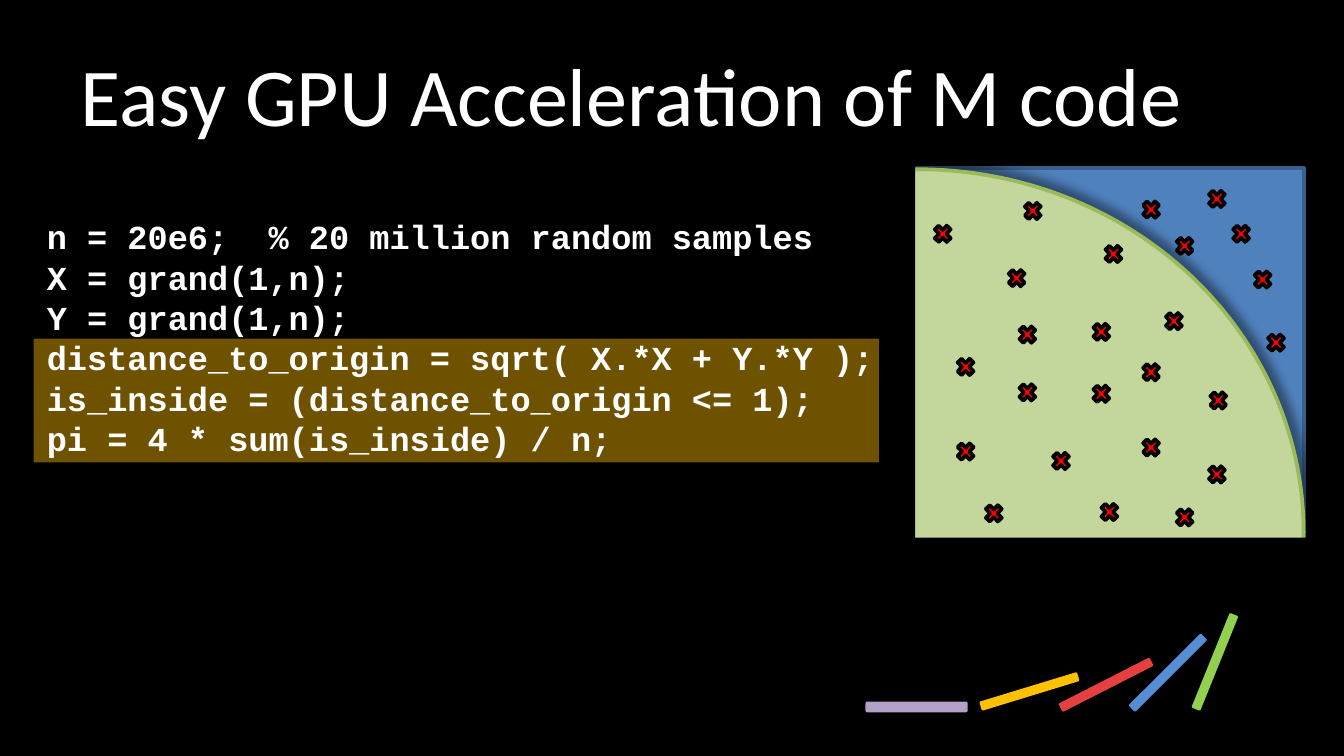
"""Build the slide on easy GPU acceleration of M code."""

from typing import NamedTuple, Optional

from lxml.etree import SubElement
from pptx import Presentation
from pptx.dml.color import RGBColor as Rgb
from pptx.enum.shapes import MSO_SHAPE as Preset
from pptx.enum.text import MSO_ANCHOR as Anchor, MSO_AUTO_SIZE as AutoSize, PP_ALIGN as Align
from pptx.oxml.ns import qn
from pptx.util import Inches, Pt

COLORS = {
    "black": "000000", "white": "FFFFFF", "square": "4F81BD", "square_edge": "3A5F8C",
    "circle": "C3D69B", "circle_edge": "9BBB59", "sample": "FF0000", "highlight": "FFC000",
    "green": "92D050", "red": "E44040", "yellow": "FFC000", "blue": "558ED5", "purple": "B3A2C7",
}


class Area(NamedTuple):
    left: float
    top: float
    width: float
    height: float


class Panel(NamedTuple):
    preset: Preset
    area: Area
    fill: str
    edge: Optional[str] = None
    rotation: float = 0


SQUARE = Panel(Preset.RECTANGLE, Area(6.81, 1.25, 2.89, 2.76), "square", "square_edge")
CIRCLE = Panel(Preset.OVAL, Area(3.96, 1.26, 5.74, 5.4), "circle", "circle_edge")
MASKS = [
    Panel(Preset.RECTANGLE, Area(3.8, 1.06, 3.01, 4.41), "black"),
    Panel(Preset.RECTANGLE, Area(4.24, 4, 5.56, 2.9), "black"),
]
HIGHLIGHT = Panel(Preset.RECTANGLE, Area(0.25, 2.52, 6.29, 0.92), "highlight")
SAMPLES = [
    (7.56, 2.4), (7.56, 2.83), (9.15, 1.65), (8.48, 1.47), (8.65, 2.3),
    (8.11, 2.38), (6.93, 1.65), (7.48, 1.98), (8.48, 3.24), (7.81, 3.34),
    (8.97, 3.44), (8.98, 2.89), (9.41, 2.46), (8.73, 1.74), (8.2, 1.8),
    (7.1, 3.27), (7.1, 2.64), (7.31, 3.73), (8.17, 3.72), (8.11, 2.84),
    (8.48, 2.68), (7.6, 1.48), (8.73, 3.76), (9.31, 1.99), (8.97, 1.39),
]
BARS = [
    Panel(Preset.ROUNDED_RECTANGLE, Area(left, top, 0.76, height), color, None, rotation)
    for left, top, height, color, rotation in [
        (8.66, 4.89, 0.07, "green", 292),
        (7.85, 5.06, 0.07, "red", 333),
        (7.28, 5.11, 0.07, "yellow", 343),
        (8.31, 4.97, 0.07, "blue", 315),
        (6.44, 5.22, 0.08, "purple", 0),
    ]
]
CODE = [
    "n = 20e6;  % 20 million random samples",
    "X = grand(1,n);",
    "Y = grand(1,n);",
    "distance_to_origin = sqrt( X.*X + Y.*Y );",
    "is_inside = (distance_to_origin <= 1);",
    "pi = 4 * sum(is_inside) / n;",
]


def color_of(name: str) -> Rgb:
    """Return the named colour."""
    return Rgb.from_string(COLORS[name])


def lengths(area: Area) -> list:
    """Return the sides of an area as lengths."""
    return [Inches(value) for value in area]


def draw_panel(slide, panel: Panel):
    """Draw a filled preset shape with an optional edge."""
    shape = slide.shapes.add_shape(panel.preset, *lengths(panel.area))
    shape.shadow.inherit = False
    shape.rotation = panel.rotation
    shape.fill.solid()
    shape.fill.fore_color.rgb = color_of(panel.fill)
    if panel.edge:
        shape.line.color.rgb = color_of(panel.edge)
        shape.line.width = Pt(2)
    else:
        shape.line.fill.background()
    return shape


def set_alpha(color_element, percent: int) -> None:
    """Set the opacity of a colour element."""
    SubElement(color_element, qn("a:alpha"), val=str(percent * 1000))


def add_glow_shadow(shape, blur: int, percent: int, scale: int) -> None:
    """Give a shape a soft, slightly enlarged black shadow without offset."""
    effects = shape.element.spPr.find(qn("a:effectLst"))
    shadow = SubElement(
        effects, qn("a:outerShdw"), blurRad=str(Pt(blur)),
        sx=str(scale * 1000), sy=str(scale * 1000), algn="ctr", rotWithShape="0",
    )
    set_alpha(SubElement(shadow, qn("a:srgbClr"), val=COLORS["black"]), percent)


def add_line(para, text: str, font_name: str, size: float, bold: bool) -> None:
    """Add a left-aligned white run to a paragraph."""
    para.alignment = Align.LEFT
    span = para.add_run()
    span.text = text
    span.font.name = font_name
    span.font.size = Pt(size)
    span.font.bold = bold
    span.font.color.rgb = color_of("white")


def draw_title(slide) -> None:
    """Place and fill the title placeholder."""
    title = slide.shapes.title
    title.left, title.top, title.width, title.height = lengths(Area(0.5, 0.23, 9, 0.94))
    title.text_frame.vertical_anchor = Anchor.MIDDLE
    add_line(title.text_frame.paragraphs[0], "Easy GPU Acceleration of M code", "Calibri", 44, False)


def draw_code(slide) -> None:
    """Draw the code listing."""
    box = slide.shapes.add_textbox(*lengths(Area(0.25, 1.56, 9.42, 1.92)))
    frame = box.text_frame
    frame.word_wrap = True
    frame.auto_size = AutoSize.SHAPE_TO_FIT_TEXT
    for index, line in enumerate(CODE):
        para = frame.add_paragraph() if index else frame.paragraphs[0]
        para.line_spacing = Pt(21.6)
        add_line(para, line, "Courier New", 18, True)


def main() -> None:
    """Build and save the deck."""
    deck = Presentation()
    deck.slide_width = Inches(10)
    deck.slide_height = deck.slide_width * 9 // 16
    page = deck.slides.add_slide(deck.slide_layouts[5])
    page.background.fill.solid()
    page.background.fill.fore_color.rgb = color_of("black")

    draw_panel(page, SQUARE)
    add_glow_shadow(draw_panel(page, CIRCLE), blur=5, percent=40, scale=102)
    for mask in MASKS:
        draw_panel(page, mask)
    for left, top in SAMPLES:
        draw_panel(page, Panel(Preset.MATH_MULTIPLY, Area(left, top, 0.17, 0.18), "sample", "black"))
    highlight = draw_panel(page, HIGHLIGHT)
    set_alpha(highlight.element.spPr.find(qn("a:solidFill"))[0], 43)
    draw_title(page)
    draw_code(page)
    for bar in BARS:
        draw_panel(page, bar)
    deck.save("out.pptx")


if __name__ == "__main__":
    main()
